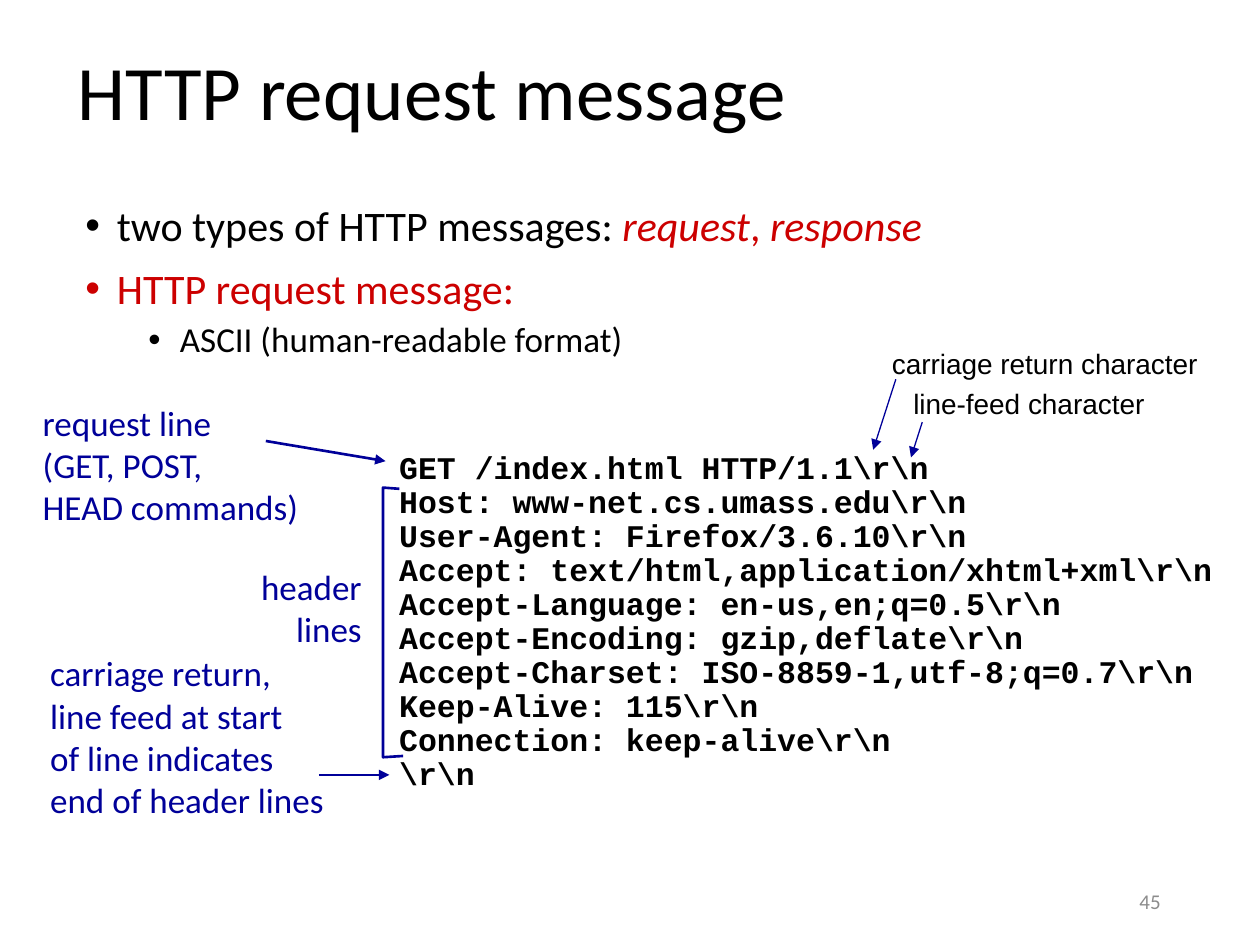
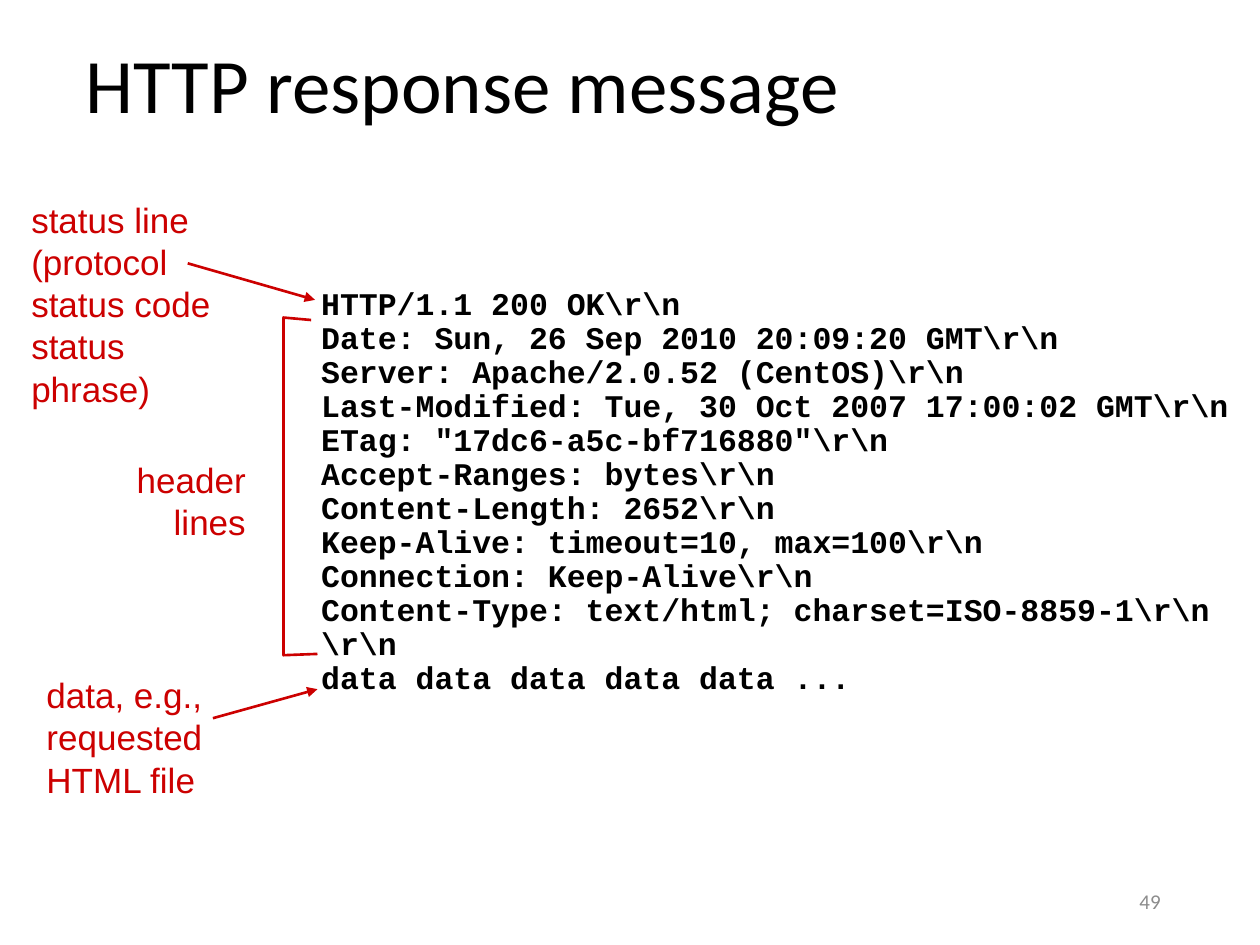
from dataclasses import dataclass
from typing import Optional

import lxml.etree
import pptx
import pptx.dml.color
import pptx.enum.shapes
import pptx.enum.text
import pptx.oxml.ns
import pptx.slide
import pptx.util

Inches = pptx.util.Inches
Align = pptx.enum.text.PP_ALIGN
Anchor = pptx.enum.text.MSO_ANCHOR
Point = tuple[float, float]


@dataclass(frozen=True)
class Theme:
    black: str = "000000"
    red: str = "CC0000"
    blue: str = "000099"
    grey: str = "8C8C8C"
    body_font: str = "Calibri"
    label_font: str = "Arial"
    code_font: str = "Courier New"
    title_size: int = 44
    body_size: int = 24
    label_size: int = 20
    code_size: int = 18
    note_size: int = 16
    footer_size: int = 12
    tight: float = 0.9
    bold_line: float = 1.5
    thin_line: float = 0.75


THEME = Theme()


@dataclass(frozen=True)
class Style:
    font: str
    size: int
    color: str
    bold: bool = False
    italic: bool = False


@dataclass(frozen=True)
class Span:
    text: str
    style: Style


@dataclass(frozen=True)
class Para:
    spans: tuple[Span, ...]
    align: Align = Align.LEFT
    spacing: Optional[float] = None
    before: float = 0
    left: float = 0
    hanging: float = 0
    bullet: bool = False


@dataclass(frozen=True)
class TextBox:
    left: float
    top: float
    width: float
    height: float
    paras: tuple[Para, ...]
    anchor: Anchor = Anchor.TOP
    wrap: bool = False


@dataclass(frozen=True)
class Arrow:
    start: Point
    end: Point
    color: str
    weight: float = THEME.bold_line


@dataclass(frozen=True)
class Bracket:
    points: tuple[Point, ...]
    color: str


TITLE = Style(THEME.body_font, THEME.title_size, THEME.black)
BODY = Style(THEME.body_font, THEME.body_size, THEME.black)
BODY_RED = Style(THEME.body_font, THEME.body_size, THEME.red)
BODY_TERM = Style(THEME.body_font, THEME.body_size, THEME.red, italic=True)
SUBPOINT = Style(THEME.body_font, THEME.label_size, THEME.black)
REQUEST_LABEL = Style(THEME.body_font, THEME.label_size, THEME.blue)
RESPONSE_LABEL = Style(THEME.label_font, THEME.label_size, THEME.red)
CODE = Style(THEME.code_font, THEME.code_size, THEME.black, bold=True)
NOTE = Style(THEME.label_font, THEME.note_size, THEME.black)
FOOTER = Style(THEME.body_font, THEME.footer_size, THEME.grey)

REQUEST_CODE = r"""GET /index.html HTTP/1.1\r\n
Host: www-net.cs.umass.edu\r\n
User-Agent: Firefox/3.6.10\r\n
Accept: text/html,application/xhtml+xml\r\n
Accept-Language: en-us,en;q=0.5\r\n
Accept-Encoding: gzip,deflate\r\n
Accept-Charset: ISO-8859-1,utf-8;q=0.7\r\n
Keep-Alive: 115\r\n
Connection: keep-alive\r\n
\r\n"""

RESPONSE_CODE = r"""HTTP/1.1 200 OK\r\n
Date: Sun, 26 Sep 2010 20:09:20 GMT\r\n
Server: Apache/2.0.52 (CentOS)\r\n
Last-Modified: Tue, 30 Oct 2007 17:00:02 GMT\r\n
ETag: "17dc6-a5c-bf716880"\r\n
Accept-Ranges: bytes\r\n
Content-Length: 2652\r\n
Keep-Alive: timeout=10, max=100\r\n
Connection: Keep-Alive\r\n
Content-Type: text/html; charset=ISO-8859-1\r\n
\r\n
data data data data data ..."""


def lines(text: str, style: Style, **layout) -> tuple[Para, ...]:
    return tuple(Para((Span(line, style),), **layout) for line in text.split("\n"))


def code(text: str) -> tuple[Para, ...]:
    return lines(text, CODE, spacing=THEME.tight, left=0.38, hanging=0.38)


def note(text: str) -> tuple[Para, ...]:
    return lines(text, NOTE, left=0.38, hanging=0.38)


def bullet(*spans: Span, left: float = 0.25, before: float = 10) -> Para:
    return Para(spans, spacing=THEME.tight, before=before, left=left, hanging=0.25, bullet=True)


def rgb(color: str) -> pptx.dml.color.RGBColor:
    return pptx.dml.color.RGBColor.from_string(color)


def add_element(parent, tag: str, **attributes: str) -> None:
    lxml.etree.SubElement(parent, pptx.oxml.ns.qn(tag), **attributes)


def fill_paragraph(paragraph, para: Para) -> None:
    properties = paragraph._p.get_or_add_pPr()
    if para.hanging:
        properties.set("marL", str(Inches(para.left)))
        properties.set("indent", str(-Inches(para.hanging)))
    if para.bullet:
        add_element(properties, "a:buFont", typeface=THEME.label_font)
        add_element(properties, "a:buChar", char="•")
    paragraph.alignment = para.align
    paragraph.space_before = pptx.util.Pt(para.before)
    if para.spacing:
        paragraph.line_spacing = para.spacing
    for span in para.spans:
        run = paragraph.add_run()
        run.text = span.text
        run.font.name = span.style.font
        run.font.size = pptx.util.Pt(span.style.size)
        run.font.color.rgb = rgb(span.style.color)
        run.font.bold = span.style.bold
        run.font.italic = span.style.italic


def draw_text(page: pptx.slide.Slide, box: TextBox) -> None:
    shape = page.shapes.add_textbox(*map(Inches, (box.left, box.top, box.width, box.height)))
    frame = shape.text_frame
    frame.word_wrap = box.wrap
    frame.vertical_anchor = box.anchor
    for index, para in enumerate(box.paras):
        fill_paragraph(frame.add_paragraph() if index else frame.paragraphs[0], para)


def draw_arrow(page: pptx.slide.Slide, arrow: Arrow) -> None:
    connector = page.shapes.add_connector(
        pptx.enum.shapes.MSO_CONNECTOR.STRAIGHT, *map(Inches, arrow.start + arrow.end)
    )
    connector.line.color.rgb = rgb(arrow.color)
    connector.line.width = pptx.util.Pt(arrow.weight)
    add_element(connector.line._get_or_add_ln(), "a:tailEnd", type="triangle")
    add_element(connector._element.spPr, "a:effectLst")


def draw_bracket(page: pptx.slide.Slide, bracket: Bracket) -> None:
    first, *rest = [(Inches(x), Inches(y)) for x, y in bracket.points]
    builder = page.shapes.build_freeform(*first)
    builder.add_line_segments(rest, close=False)
    shape = builder.convert_to_shape()
    shape.shadow.inherit = False
    shape.fill.background()
    shape.line.color.rgb = rgb(bracket.color)
    shape.line.width = pptx.util.Pt(THEME.bold_line)


DRAWERS = {TextBox: draw_text, Arrow: draw_arrow, Bracket: draw_bracket}


def title(text: str, left: float, top: float, height: float) -> TextBox:
    return TextBox(left, top, 8.5, height, lines(text, TITLE, spacing=THEME.tight), Anchor.MIDDLE, True)


def page_number(number: int) -> TextBox:
    return TextBox(7.06, 6.95, 2.25, 0.4, lines(str(number), FOOTER, align=Align.RIGHT), Anchor.MIDDLE, True)


REQUEST_PAGE = (
    title("HTTP request message", 0.52, 0.26, 1),
    TextBox(0.58, 1.58, 8.5, 1.62, (
        bullet(
            Span("two types of HTTP messages: ", BODY),
            Span("request", BODY_TERM),
            Span(", ", BODY_RED),
            Span("response", BODY_TERM),
            before=0,
        ),
        bullet(Span("HTTP request message:", BODY_RED)),
        bullet(Span("ASCII (human-readable format)", SUBPOINT), left=0.75, before=5),
    ), wrap=True),
    TextBox(0.24, 3.14, 2.25, 1.11, lines("request line\n(GET, POST,\nHEAD commands)", REQUEST_LABEL)),
    Arrow((2.11, 3.5), (3.06, 3.66), THEME.blue),
    Bracket(((3.17, 3.88), (3.04, 3.87), (3.04, 6.01), (3.2, 6)), THEME.blue),
    TextBox(1.96, 4.44, 1.01, 0.77, lines("header\nlines", REQUEST_LABEL, align=Align.RIGHT)),
    Arrow((2.53, 6.15), (3.09, 6.15), THEME.blue),
    TextBox(
        0.3, 5.16, 2.4, 1.41,
        lines("carriage return,", REQUEST_LABEL, spacing=THEME.tight)
        + lines("line feed at start\nof line indicates\nend of header lines", REQUEST_LABEL),
    ),
    TextBox(3.07, 3.54, 6.84, 2.83, code(REQUEST_CODE)),
    Arrow((7.11, 3.01), (6.93, 3.57), THEME.blue, THEME.thin_line),
    TextBox(6.98, 2.7, 2.64, 0.37, note("carriage return character")),
    TextBox(7.15, 3.02, 2.04, 0.37, note("line-feed character")),
    Arrow((7.32, 3.35), (7.23, 3.63), THEME.blue, THEME.thin_line),
    page_number(45),
)

RESPONSE_PAGE = (
    title("HTTP response message", 0.58, 0.17, 1.07),
    TextBox(
        0.15, 1.53, 1.8, 1.43,
        lines("status line\n(protocol\nstatus code\nstatus phrase)", RESPONSE_LABEL),
        wrap=True,
    ),
    Arrow((1.49, 2.09), (2.5, 2.38), THEME.red),
    Bracket(((2.47, 2.54), (2.25, 2.52), (2.25, 5.2), (2.52, 5.19)), THEME.red),
    TextBox(0.98, 3.59, 1.07, 0.77, lines("header\nlines", RESPONSE_LABEL, align=Align.RIGHT)),
    Arrow((1.69, 5.7), (2.52, 5.47), THEME.red),
    TextBox(0.27, 5.3, 1.51, 1.1, lines("data, e.g.,\nrequested\nHTML file", RESPONSE_LABEL)),
    TextBox(2.45, 2.24, 7.55, 3.37, code(RESPONSE_CODE), wrap=True),
    page_number(49),
)


def main() -> None:
    deck = pptx.Presentation()
    deck.slide_width = Inches(10)
    deck.slide_height = Inches(7.5)
    for elements in (REQUEST_PAGE, RESPONSE_PAGE):
        page = deck.slides.add_slide(deck.slide_layouts[6])
        for element in elements:
            DRAWERS[type(element)](page, element)
    deck.save("out.pptx")


if __name__ == "__main__":
    main()
